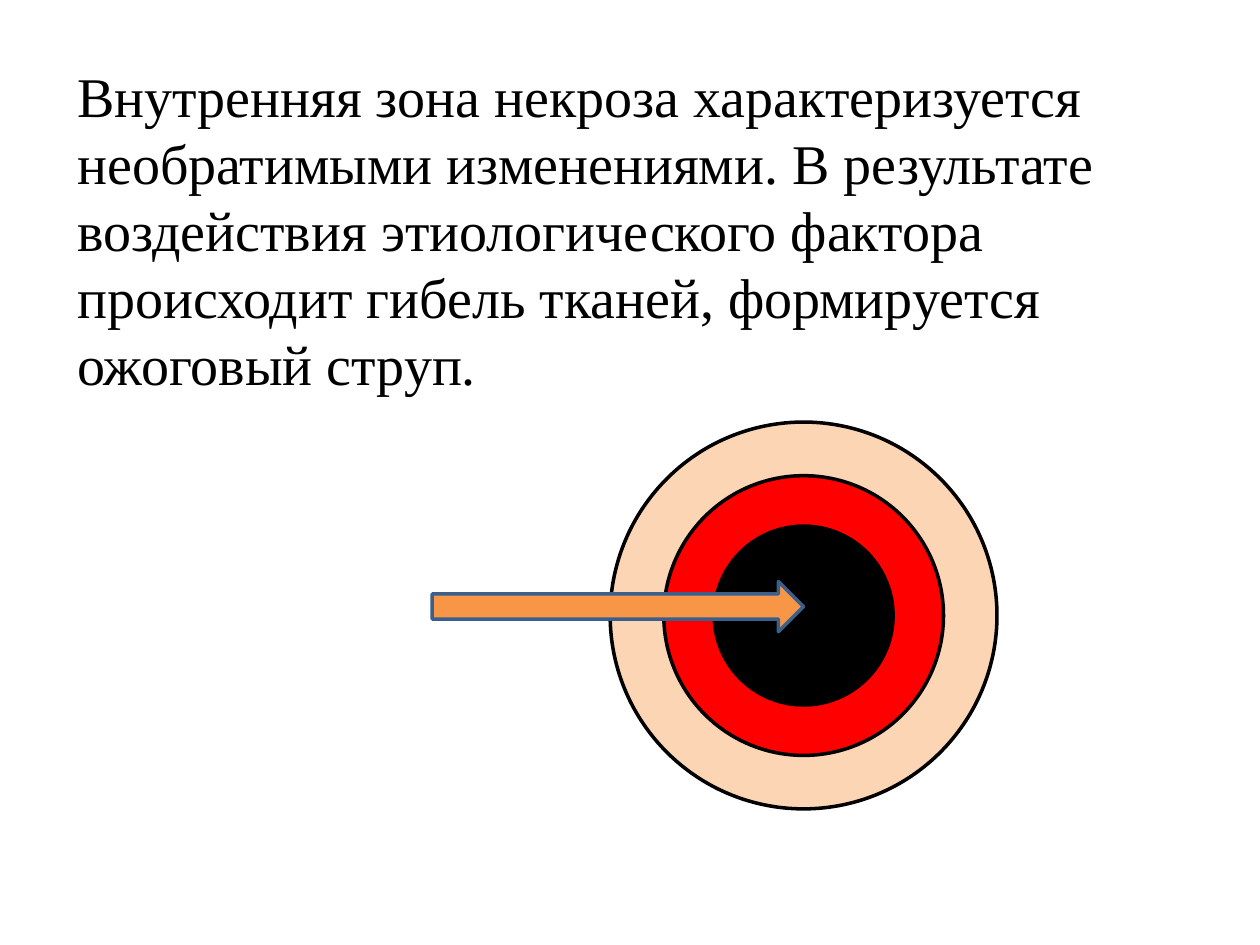
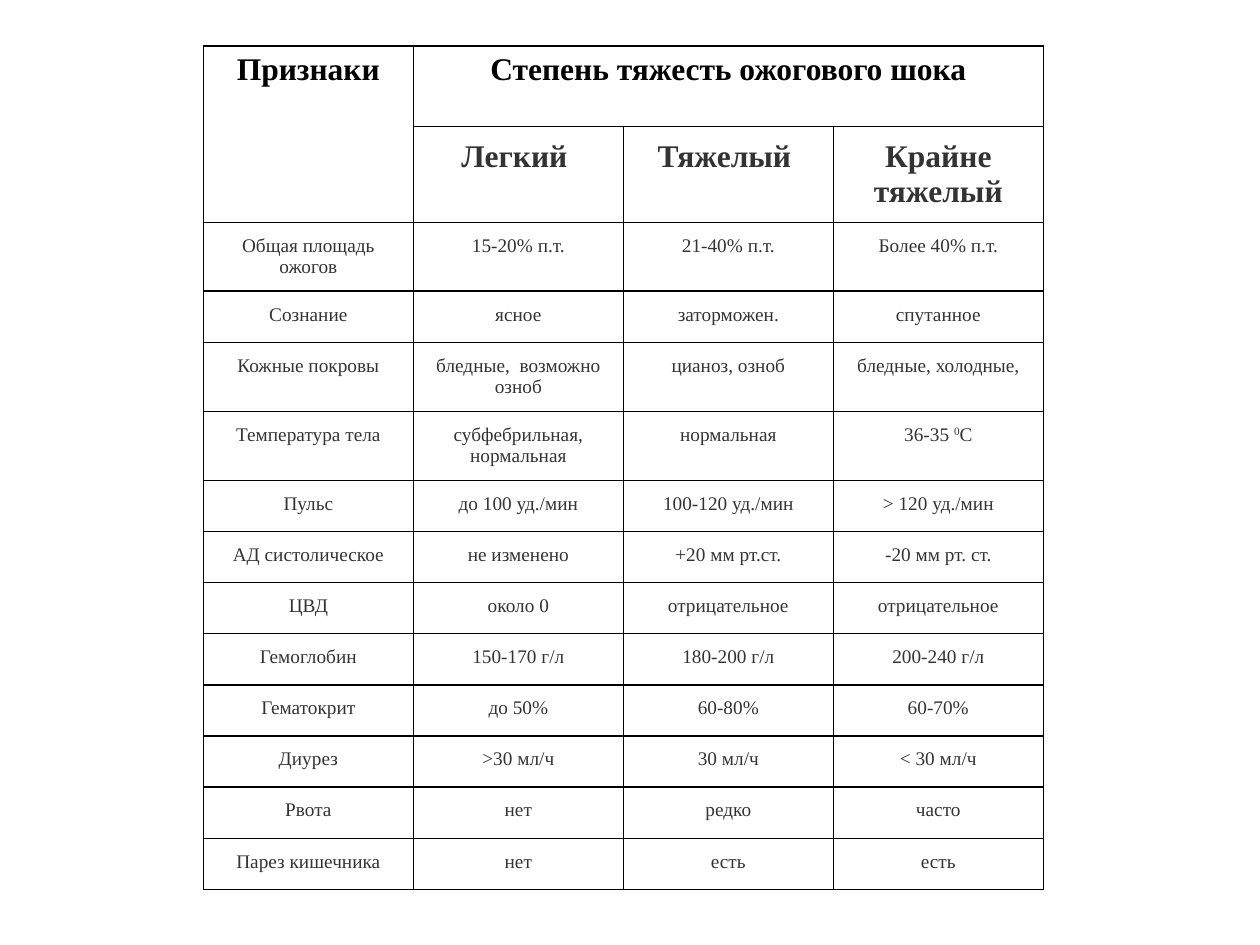
import pptx
import pptx.util
import pptx.dml.color
import pptx.enum.shapes
import pptx.enum.text
import lxml.etree

Pt = pptx.util.Pt
SHAPE = pptx.enum.shapes.MSO_SHAPE
ALIGN = pptx.enum.text.PP_ALIGN

# Square grid: 100 columns by 75 rows on a 10 x 7.5 inch slide
COLS, ROWS = 100, 75
UNIT = pptx.util.Inches(10) // COLS

FONT = "Times New Roman"
BLACK, GREY = "000000", "333333"
PEACH, RED, ORANGE, BLUE = "FCD5B5", "FF0000", "F79646", "3A5F8C"

NECROSIS = ("Внутренняя зона некроза характеризуется необратимыми изменениями. "
            "В результате воздействия этиологического фактора происходит гибель "
            "тканей, формируется ожоговый струп.")

HEADERS = [
    ["Признаки", "Степень тяжесть ожогового шока", "", ""],
    ["", "Легкий ", "Тяжелый ", "Крайне тяжелый"],
]
# Text between ^ marks is superscript
SIGNS = [
    ["Общая площадь ожогов", "15-20% п.т.", "21-40% п.т.", "Более 40% п.т."],
    ["Сознание", "ясное", "заторможен.", "спутанное"],
    ["Кожные покровы", "бледные,  возможно озноб", "цианоз, озноб", "бледные, холодные,"],
    ["Температура тела", "субфебрильная, нормальная", "нормальная", "36-35 ^0^С"],
    ["Пульс", "до 100 уд./мин", "100-120 уд./мин", "> 120 уд./мин"],
    ["АД систолическое", "не изменено", "+20 мм рт.ст.", "-20 мм рт. ст."],
    ["ЦВД", "около 0", "отрицательное", "отрицательное"],
    ["Гемоглобин", "150-170 г/л", "180-200 г/л", "200-240 г/л"],
    ["Гематокрит", "до 50%", "60-80%", "60-70%"],
    ["Диурез", ">30 мл/ч", "30 мл/ч", "< 30 мл/ч"],
    ["Рвота", "нет", "редко", "часто"],
    ["Парез кишечника", "нет", "есть", "есть"],
]


def color(hex_value):
    return pptx.dml.color.RGBColor.from_string(hex_value)


def grid(*lengths):
    return [round(n * UNIT) for n in lengths]


def write(tf, text, size=11, fill=BLACK, bold=False, align=ALIGN.LEFT,
          before=0, line=None):
    p = tf.paragraphs[0]
    p.alignment = align
    p.space_before = Pt(before)
    if line:
        p.line_spacing = Pt(line)
    for i, part in enumerate(text.split("^")):
        r = p.add_run()
        r.text = part
        r.font.name, r.font.size, r.font.bold = FONT, Pt(size), bold
        r.font.color.rgb = color(fill)
        if i % 2:
            r._r.get_or_add_rPr().set("baseline", "30000")


def add_shape(s, kind, box, fill, line):
    sp = s.shapes.add_shape(kind, *grid(*box))
    sp.shadow.inherit = False
    sp.fill.solid()
    sp.fill.fore_color.rgb = color(fill)
    sp.line.color.rgb = color(line)
    sp.line.width = Pt(2)
    return sp


def border(cell, width=1):
    tc_pr = cell._tc.get_or_add_tcPr()
    ns = "{http://schemas.openxmlformats.org/drawingml/2006/main}"
    for i, side in enumerate(("lnL", "lnR", "lnT", "lnB")):
        ln = lxml.etree.Element(ns + side, w=str(Pt(width)))
        solid = lxml.etree.SubElement(ln, ns + "solidFill")
        lxml.etree.SubElement(solid, ns + "srgbClr", val=BLACK)
        tc_pr.insert(i, ln)


def burn_zones(s, box):
    """Concentric zones with an arrow that ends near their centre."""
    x, y, w, h = box
    cx, cy = x + w / 2, y + h / 2
    for diameter, fill in ((w, PEACH), (22.2, RED), (14.2, BLACK)):
        corner = cx - diameter / 2, cy - diameter / 2
        add_shape(s, SHAPE.OVAL, (*corner, diameter, diameter), fill, BLACK)
    length, height = w * 0.96, w * 0.13
    add_shape(s, SHAPE.RIGHT_ARROW,
              (cx - length, cy - 2.7, length, height), ORANGE, BLUE)


def body_text(s, box, text):
    tf = s.shapes.add_textbox(*grid(*box)).text_frame
    tf.word_wrap = True
    write(tf, text, size=32, before=3.6, line=38.25)


def shock_table(s, box, top_row=6.4, row=4.06):
    rows = HEADERS + SIGNS
    frame = s.shapes.add_table(len(rows), len(rows[0]), *grid(*box))
    table = frame.table
    table.first_row = table.horz_banding = False
    for column in table.columns:
        column.width = grid(box[2] / len(rows[0]))[0]
    for i, texts in enumerate(rows):
        header = i < len(HEADERS)
        table.rows[i].height = grid(top_row if i == 0 else row)[0]
        for cell, text in zip(table.rows[i].cells, texts):
            cell.fill.background()
            border(cell)
            if i:
                cell.margin_top, cell.margin_bottom = grid(1, 0.6 if header else 0.8)
            if text:
                write(cell.text_frame, text, size=18 if header else 11,
                      fill=GREY if i else BLACK, bold=header, align=ALIGN.CENTER)
    table.cell(0, 0).merge(table.cell(1, 0))
    table.cell(0, 1).merge(table.cell(0, 3))


def main():
    prs = pptx.Presentation()
    prs.slide_width, prs.slide_height = COLS * UNIT, ROWS * UNIT
    blank = prs.slide_layouts[6]

    s = prs.slides.add_slide(blank)
    body_text(s, (5.15, 4.4, 90, 49.5), NECROSIS)
    burn_zones(s, (48.43, 33.5, 30.7, 30.7))

    s = prs.slides.add_slide(blank)
    shock_table(s, (16.14, 3.64, 66.67, 59.2))

    prs.save("out.pptx")


if __name__ == "__main__":
    main()
